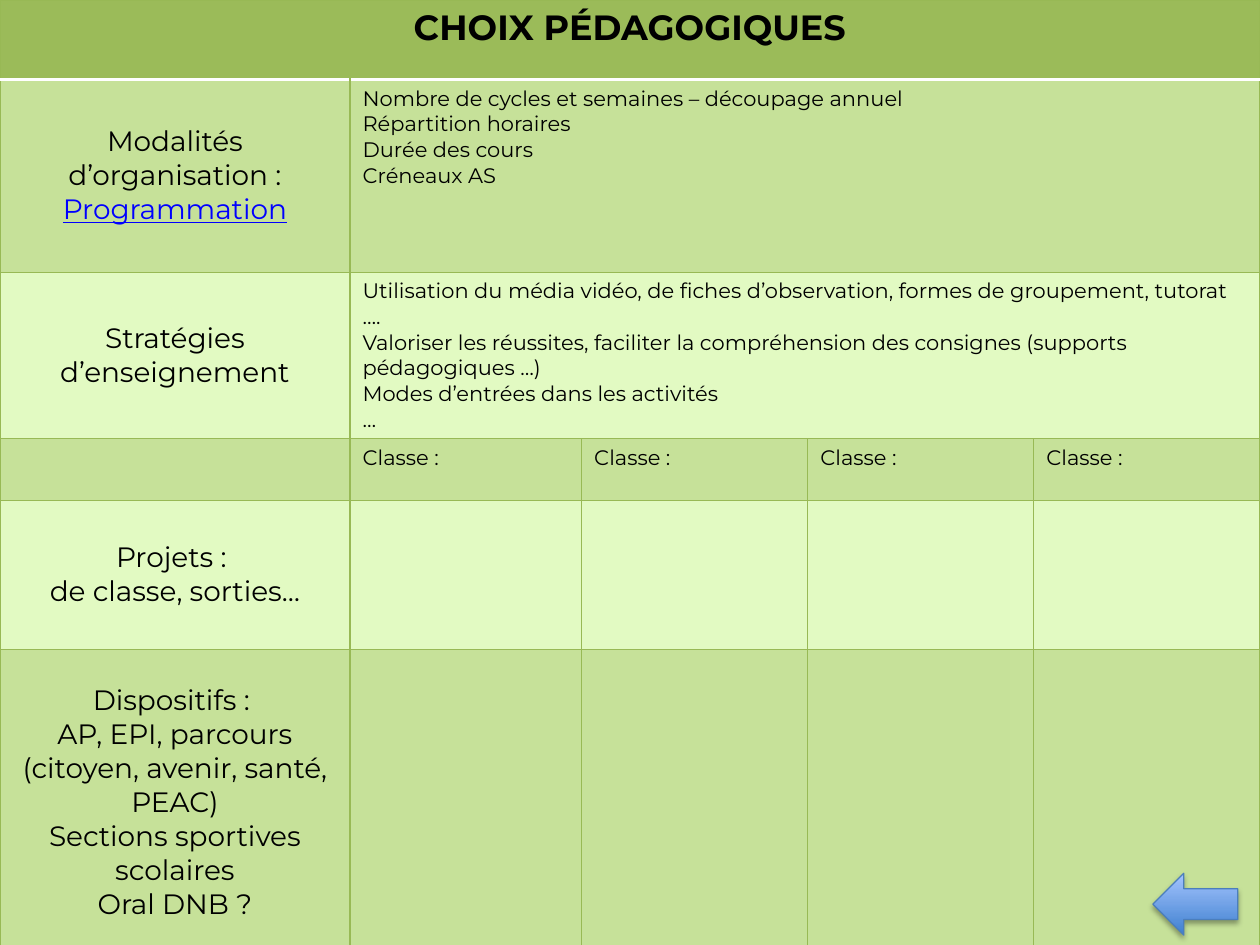
from collections import namedtuple
from dataclasses import dataclass

from lxml.etree import SubElement
from pptx import Presentation
from pptx.dml.color import RGBColor
from pptx.enum.shapes import MSO_SHAPE as Preset
from pptx.enum.text import MSO_ANCHOR as Anchor, PP_ALIGN as Align
from pptx.oxml.ns import qn
from pptx.util import Pt


@dataclass(frozen=True)
class Theme:
    font: str = "Montserrat"
    title_size: float = 20
    label_size: float = 16
    body_size: float = 12
    text: str = "000000"
    link: str = "0000FF"
    header: str = "9BBB59"
    dark_band: str = "C6E199"
    light_band: str = "E2FAC2"
    grid: str = "98B955"
    divider: str = "FFFFFF"
    arrow_line: str = "4B7EBC"
    arrow_low: str = "3F80CE"
    arrow_high: str = "A4C4FF"


THEME = Theme()
Box = namedtuple("Box", "left top width height")

COLUMN_WIDTHS = [200, 132.4] + [129.2] * 3
ROW_HEIGHTS = [45.4, 110.2, 89.3, 35.3, 85, 175]
TITLE = "CHOIX PÉDAGOGIQUES"
LABELS = {
    1: ["Modalités d’organisation :", "Programmation"],
    2: ["Stratégies d’enseignement"],
    4: ["Projets : ", "de classe, sorties…"],
    5: [
        "Dispositifs : ",
        "AP, EPI, parcours (citoyen, avenir, santé, PEAC)",
        "Sections sportives scolaires",
        "Oral DNB ?",
    ],
}
DETAILS = {
    1: [
        "Nombre de cycles et semaines – découpage annuel",
        "Répartition horaires",
        "Durée des cours",
        "Créneaux AS",
    ],
    2: [
        "Utilisation du média vidéo, de fiches d’observation, formes de groupement, tutorat ….",
        "Valoriser les réussites, faciliter la compréhension des consignes (supports pédagogiques …)",
        "Modes d’entrées dans les activités",
        "…",
    ],
}
CLASS_ROW = 3


def rgb(code):
    return RGBColor.from_string(code)


def write(cell, lines, size, align=Align.LEFT, anchor=Anchor.TOP, bold=False, links=()):
    cell.vertical_anchor = anchor
    frame = cell.text_frame
    for index, line in enumerate(lines):
        para = frame.paragraphs[0] if index == 0 else frame.add_paragraph()
        para.alignment = align
        span = para.add_run()
        span.text = line
        font = span.font
        font.name, font.size, font.bold = THEME.font, Pt(size), bold
        font.underline = line in links
        font.color.rgb = rgb(THEME.link if line in links else THEME.text)


def draw_border(cell, side, color, width):
    properties = cell._tc.get_or_add_tcPr()
    line = SubElement(properties, qn(f"a:ln{side}"), w=str(Pt(width)))
    fill = SubElement(line, qn("a:solidFill"))
    SubElement(fill, qn("a:srgbClr"), val=color)


def style_cell(cell, row):
    for side in "LRTB":
        divides = (row, side) in ((0, "B"), (1, "T"))
        color, width = (THEME.divider, 2) if divides else (THEME.grid, 0.75)
        draw_border(cell, side, color, width)
    band = THEME.dark_band if row % 2 else THEME.light_band
    cell.fill.solid()
    cell.fill.fore_color.rgb = rgb(band if row else THEME.header)


def add_choices_table(page, box):
    table = page.shapes.add_table(
        len(ROW_HEIGHTS), len(COLUMN_WIDTHS), *map(Pt, box)
    ).table
    for column, width in zip(table.columns, COLUMN_WIDTHS):
        column.width = Pt(width)
    for index, height in enumerate(ROW_HEIGHTS):
        table.rows[index].height = Pt(height)
        for cell in table.rows[index].cells:
            style_cell(cell, index)

    last = len(COLUMN_WIDTHS) - 1
    table.cell(0, 0).merge(table.cell(0, last))
    write(table.cell(0, 0), [TITLE], THEME.title_size, align=Align.CENTER, bold=True)
    for row, lines in LABELS.items():
        write(table.cell(row, 0), lines, THEME.label_size, align=Align.CENTER,
              anchor=Anchor.MIDDLE, links=("Programmation",))
    for row, lines in DETAILS.items():
        table.cell(row, 1).merge(table.cell(row, last))
        write(table.cell(row, 1), lines, THEME.body_size)
    for column in range(1, last + 1):
        write(table.cell(CLASS_ROW, column), ["Classe :"], THEME.body_size)


def add_back_arrow(page, box):
    arrow = page.shapes.add_shape(Preset.LEFT_ARROW, *map(Pt, box))
    arrow.shadow.inherit = False
    arrow.fill.gradient()
    arrow.fill.gradient_angle = 90
    for stop, color in zip(arrow.fill.gradient_stops, (THEME.arrow_low, THEME.arrow_high)):
        stop.color.rgb = rgb(color)
    arrow.line.color.rgb = rgb(THEME.arrow_line)
    arrow.line.width = Pt(0.75)
    effects = arrow._element.spPr.find(qn("a:effectLst"))
    shadow = SubElement(effects, qn("a:outerShdw"), blurRad=str(Pt(3.1)),
                        dist=str(Pt(1.8)), dir="5400000", rotWithShape="0")
    color = SubElement(shadow, qn("a:srgbClr"), val=THEME.text)
    SubElement(color, qn("a:alpha"), val="35000")


def main():
    deck = Presentation()
    deck.slide_width, deck.slide_height = Pt(720), Pt(540)
    page = deck.slides.add_slide(deck.slide_layouts[6])
    add_choices_table(page, Box(0, 0, sum(COLUMN_WIDTHS), sum(ROW_HEIGHTS)))
    add_back_arrow(page, Box(658.8, 499, 48.5, 35.3))
    deck.save("out.pptx")


if __name__ == "__main__":
    main()
